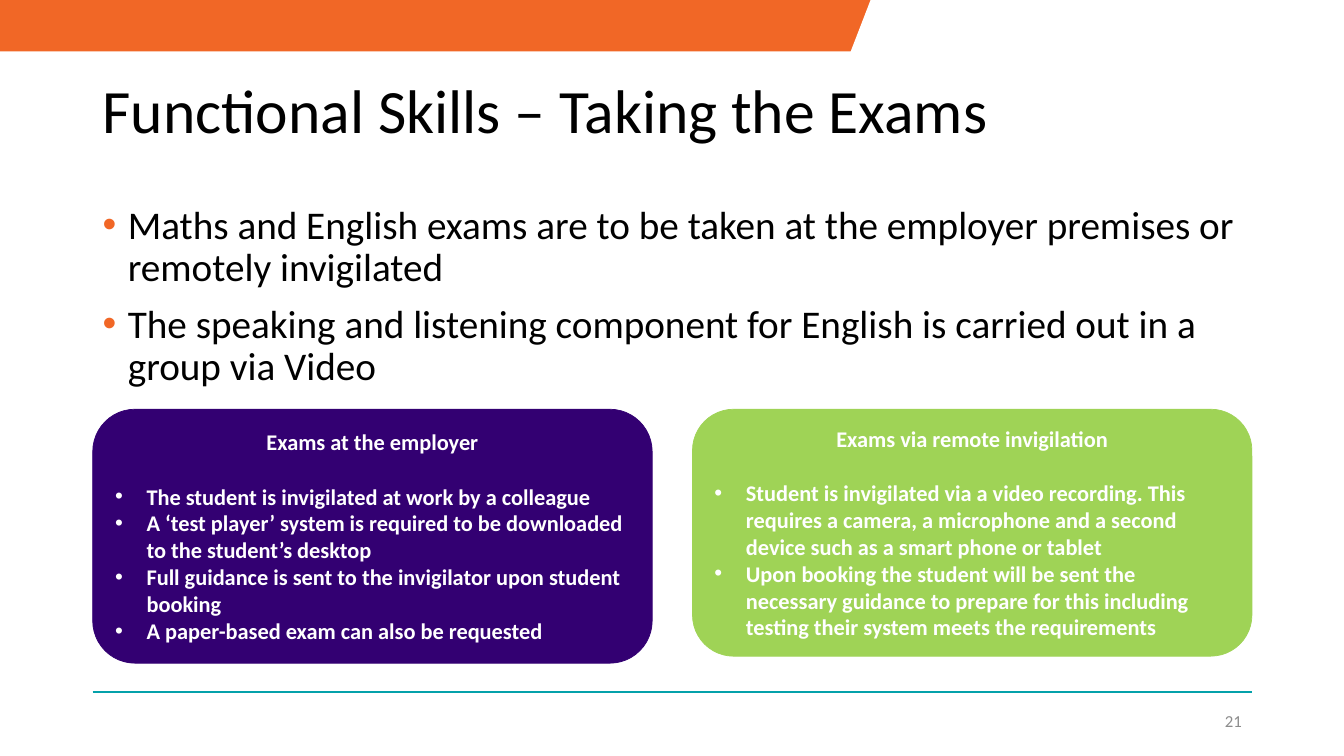
from lxml import etree
from pptx import Presentation
from pptx.dml import color
from pptx.enum import shapes, text
from pptx.oxml import ns
from pptx.util import Pt

LEFT = 66.24
RIGHT = 894.24
CARD = 399.6
WHITE = "FFFFFF"
BLACK = "000000"
ORANGE = "F16726"
KIND = shapes.MSO_SHAPE
ALIGN = text.PP_ALIGN
MID = text.MSO_ANCHOR.MIDDLE

POINTS = [
    "Maths and English exams are to be taken at the employer premises or remotely invigilated",
    "The speaking and listening component for English is carried out in a group via Video",
]
WORK = [
    "The student is invigilated at work by a colleague",
    "A ‘test player’ system is required to be downloaded to the student’s desktop",
    "Full guidance is sent to the invigilator upon student booking",
    "A paper-based exam can also be requested",
]
REMOTE = [
    "Student is invigilated via a video recording. This requires a camera, a microphone "
    "and a second device such as a smart phone or tablet",
    "Upon booking the student will be sent the necessary guidance to prepare for this "
    "including testing their system meets the requirements",
]


def paint(target, tone):
    target.rgb = color.RGBColor.from_string(tone)


def add_shape(slide, kind, box, fill, width=None):
    shape = slide.shapes.add_shape(kind, *map(Pt, box))
    shape.shadow.inherit = False
    shape.fill.solid()
    paint(shape.fill.fore_color, fill)
    if width:
        shape.line.width = Pt(width)
        paint(shape.line.color, fill)
    else:
        shape.line.fill.background()
    return shape


def add_rule(slide, y, tone):
    line = slide.shapes.add_connector(
        shapes.MSO_CONNECTOR.STRAIGHT, Pt(LEFT), Pt(y), Pt(RIGHT), Pt(y))
    line.line.width = Pt(1.5)
    paint(line.line.color, tone)
    etree.SubElement(line._element.spPr, ns.qn("a:effectLst"))


def add_bullet(para, indent, tone):
    props = para._p.get_or_add_pPr()
    props.set("marL", str(Pt(indent)))
    props.set("indent", str(-Pt(indent)))
    hue = etree.SubElement(props, ns.qn("a:buClr"))
    etree.SubElement(hue, ns.qn("a:srgbClr"), val=tone)
    etree.SubElement(props, ns.qn("a:buFont"), typeface="Arial")
    etree.SubElement(props, ns.qn("a:buChar"), char="•")


def write(frame, lines, size, tone, bold=False, align=ALIGN.LEFT):
    frame.word_wrap = True
    frame.text = "\n".join(lines)
    for para in frame.paragraphs:
        para.alignment = align
        for run in para.runs:
            font = run.font
            font.name = "Calibri"
            font.size = Pt(size)
            font.bold = bold
            paint(font.color, tone)
    return frame.paragraphs


def add_text(slide, box, lines, size, tone, anchor=MID, align=ALIGN.LEFT):
    frame = slide.shapes.add_textbox(*map(Pt, box)).text_frame
    frame.vertical_anchor = anchor
    return write(frame, lines, size, tone, align=align)


def add_card(slide, x, height, fill, head, items):
    card = add_shape(slide, KIND.ROUNDED_RECTANGLE, (x, 292.3, CARD, height), fill, 0.5)
    card.text_frame.vertical_anchor = MID
    title, *rest = write(card.text_frame, [head, *items], 16, WHITE, bold=True)
    title.alignment = ALIGN.CENTER
    title.space_after = Pt(19.5)
    for para in rest:
        add_bullet(para, 22.5, WHITE)


def main():
    deck = Presentation()
    deck.slide_width, deck.slide_height = Pt(960), Pt(540)
    slide = deck.slides.add_slide(deck.slide_layouts[6])

    add_shape(slide, KIND.RECTANGLE, (0, 0, 622, 36.7), ORANGE)
    add_shape(slide, KIND.ISOSCELES_TRIANGLE, (599, 0, 46.8, 60.5), WHITE, 1)
    add_rule(slide, 494.6, "04A1AA")

    title = add_text(slide, (LEFT, 28.8, 650, 104.4),
                     ["Functional Skills – Taking the Exams"], 44, BLACK)
    title[0].line_spacing = 0.9

    body = add_text(slide, (LEFT, 143.3, 840, 349), POINTS, 28, BLACK, text.MSO_ANCHOR.TOP)
    for rank, para in enumerate(body):
        add_bullet(para, 18, ORANGE)
        para.line_spacing = 0.9
        para.space_before = Pt(10 if rank else 0)

    add_text(slide, (RIGHT - 216, 500.5, 216, 28.75), ["21"], 12, "8C8C8C", align=ALIGN.RIGHT)

    add_card(slide, LEFT, 181.4, "330072", "Exams at the employer", WORK)
    add_card(slide, RIGHT - CARD, 176.4, "9FD356", "Exams via remote invigilation", REMOTE)

    deck.save("out.pptx")


if __name__ == "__main__":
    main()
